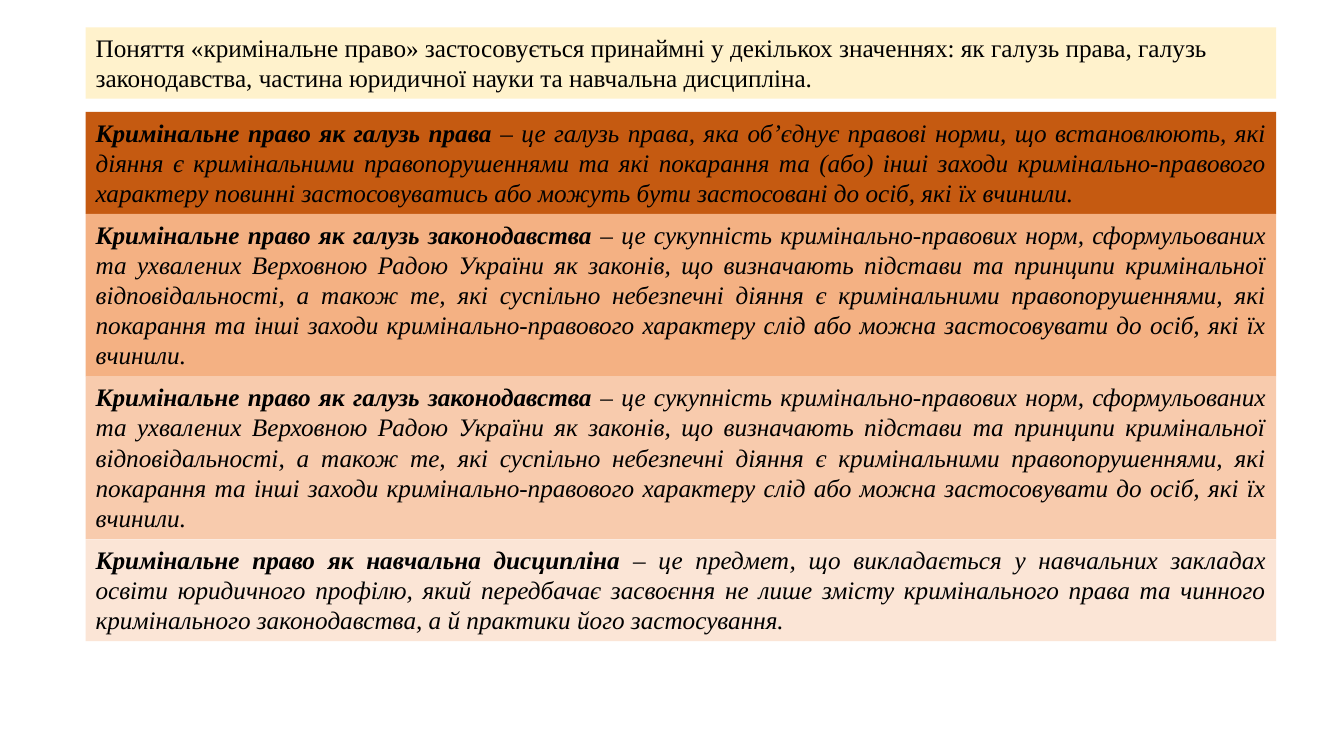
import pptx
import pptx.dml.color
import pptx.enum.text
import pptx.util

Cm = pptx.util.Cm
Align = pptx.enum.text.PP_ALIGN


def color(text):
    return pptx.dml.color.RGBColor.from_string(text)


class Deck:
    font = "Times New Roman"
    size = 18
    ink = "000000"
    left = 2.16
    width = 30

    def __init__(self):
        self.file = pptx.Presentation()
        self.file.slide_width = Cm(33.87)
        self.file.slide_height = Cm(19.05)
        self.slide = self.file.slides.add_slide(self.file.slide_layouts[6])

    def run(self, para, text, bold=False, slant=False):
        run = para.add_run()
        run.text = text
        run.font.name = self.font
        run.font.size = pptx.util.Pt(self.size)
        run.font.color.rgb = color(self.ink)
        run.font.bold = bold
        run.font.italic = slant

    def band(self, top, height, fill, align=Align.LEFT):
        box = self.slide.shapes.add_textbox(
            Cm(self.left), Cm(top), Cm(self.width), Cm(height))
        box.fill.solid()
        box.fill.fore_color.rgb = color(fill)
        frame = box.text_frame
        frame.word_wrap = True
        frame.auto_size = pptx.enum.text.MSO_AUTO_SIZE.SHAPE_TO_FIT_TEXT
        para = frame.paragraphs[0]
        para.alignment = align
        return para

    def intro(self, top, height, fill, text):
        self.run(self.band(top, height, fill), text)

    def term(self, top, height, fill, name, text):
        para = self.band(top, height, fill, Align.JUSTIFY)
        self.run(para, name, bold=True, slant=True)
        self.run(para, " – ")
        self.run(para, text, slant=True)


LAW = (
    "Кримінальне право як галузь законодавства",
    "це сукупність кримінально-правових норм, сформульованих та ухвалених "
    "Верховною Радою України як законів, що визначають підстави та принципи "
    "кримінальної відповідальності, а також те, які суспільно небезпечні "
    "діяння є кримінальними правопорушеннями, які покарання та інші заходи "
    "кримінально-правового характеру слід або можна застосовувати до осіб, "
    "які їх вчинили.",
)
TERMS = [
    (2.57, "C55A11", (
        "Кримінальне право як галузь права",
        "це галузь права, яка об’єднує правові норми, що встановлюють, які "
        "діяння є кримінальними правопорушеннями та які покарання та (або) "
        "інші заходи кримінально-правового характеру повинні застосовуватись "
        "або можуть бути застосовані до осіб, які їх вчинили.")),
    (4.1, "F4B183", LAW),
    (4.1, "F8CBAD", LAW),
    (2.57, "FBE5D6", (
        "Кримінальне право як навчальна дисципліна",
        "це предмет, що викладається у навчальних закладах освіти "
        "юридичного профілю, який передбачає засвоєння не лише змісту "
        "кримінального права та чинного кримінального законодавства, "
        "а й практики його застосування.")),
]


def main():
    deck = Deck()
    deck.intro(
        0.69, 1.8, "FFF2CC",
        "Поняття «кримінальне право» застосовується принаймні у декількох "
        "значеннях: як галузь права, галузь законодавства, частина "
        "юридичної науки та навчальна дисципліна.")
    top = 2.82
    for height, fill, words in TERMS:
        deck.term(top, height, fill, *words)
        top += height
    deck.file.save("out.pptx")


if __name__ == "__main__":
    main()
